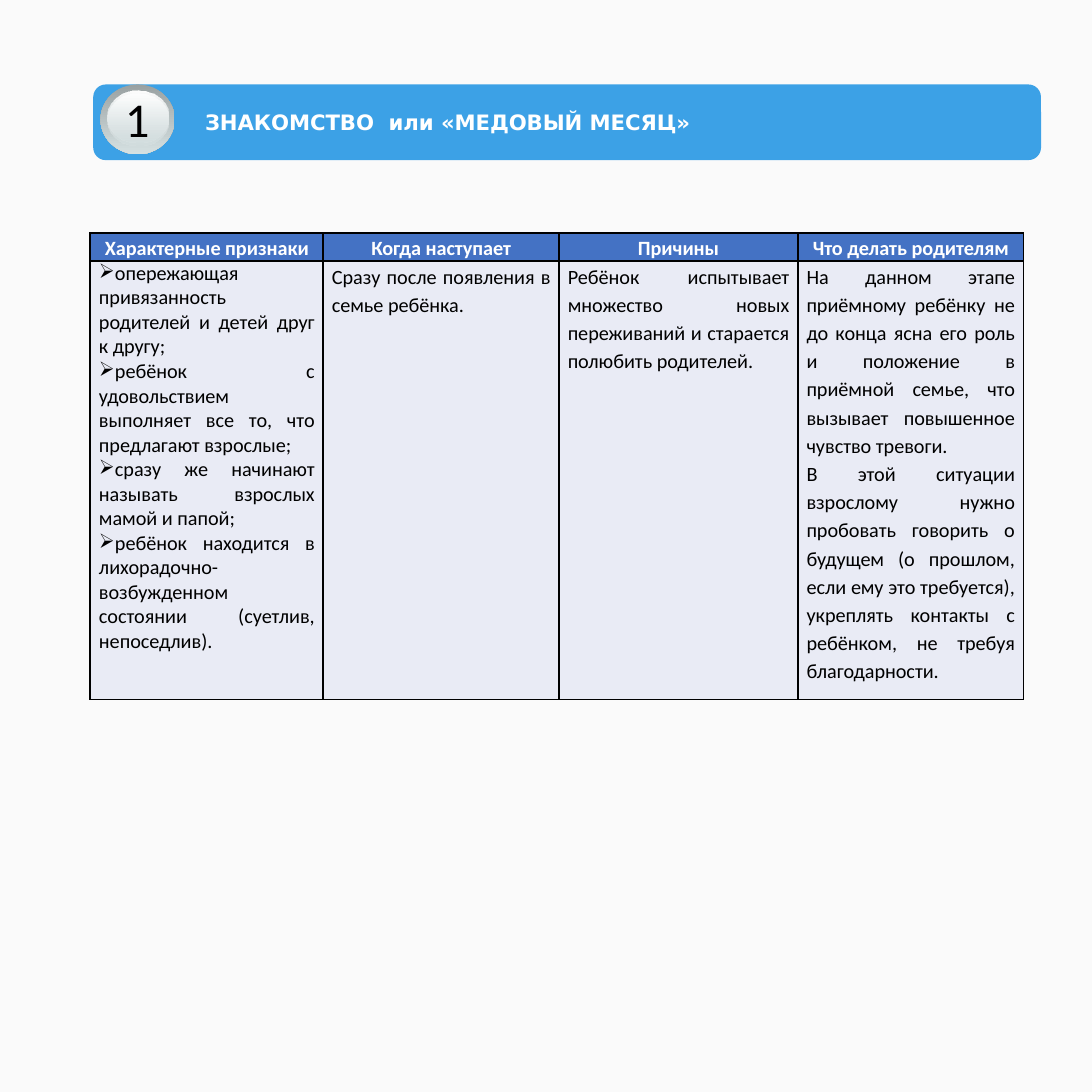
from lxml.etree import SubElement
from pptx import Presentation
from pptx.dml.color import RGBColor
from pptx.enum.shapes import MSO_SHAPE
from pptx.enum.text import MSO_ANCHOR, PP_ALIGN
from pptx.oxml.ns import qn
from pptx.util import Inches, Pt

PAPER = RGBColor(0xFA, 0xFA, 0xFA)
WHITE = RGBColor(0xFF, 0xFF, 0xFF)
BLACK = RGBColor(0x00, 0x00, 0x00)
BANNER = RGBColor(0x3C, 0xA1, 0xE6)
HEADER = RGBColor(0x44, 0x72, 0xC4)
BODY = RGBColor(0xE9, 0xEB, 0xF5)
STEEL = RGBColor(0x99, 0xA1, 0xA2)
SILVER = RGBColor(0xD6, 0xE1, 0xE2)

GRID = 75  # columns and rows across the square slide

TITLE = {"name": "DejaVu Sans", "size": Pt(10.5), "bold": True}
NUMBER = {"name": "Calibri", "size": Pt(24), "bold": False}
HEADER_TEXT = {"name": "Calibri", "size": Pt(10), "bold": True}
BODY_TEXT = {"name": "Calibri", "size": Pt(10), "bold": False}

STAGE = [
    ("Характерные признаки", 16, "➢", [
        "опережающая привязанность родителей и детей друг к другу;",
        "ребёнок с удовольствием выполняет все то, что предлагают взрослые;",
        "сразу же начинают называть взрослых мамой и папой;",
        "ребёнок находится в лихорадочно-возбужденном состоянии (суетлив, непоседлив).",
    ]),
    ("Когда наступает", 16.2, None, ["Сразу после появления в семье ребёнка."]),
    ("Причины", 16.4, None, [
        "Ребёнок испытывает множество новых переживаний и старается полюбить родителей.",
    ]),
    ("Что делать родителям", 15.5, None, [
        "На данном этапе приёмному ребёнку не до конца ясна его роль и положение "
        "в приёмной семье, что вызывает повышенное чувство тревоги.",
        "В этой ситуации взрослому нужно пробовать говорить о будущем (о прошлом, "
        "если ему это требуется), укреплять контакты с ребёнком, не требуя благодарности.",
    ]),
]


def assign(target, values):
    for name, value in values.items():
        setattr(target, name, value)


class StageSlide:
    def __init__(self, deck):
        self.unit = deck.slide_width / GRID
        self.page = deck.slides.add_slide(deck.slide_layouts[6])
        self.page.background.fill.solid()
        self.page.background.fill.fore_color.rgb = PAPER

    def span(self, *cells):
        return [round(cell * self.unit) for cell in cells]

    def shape(self, kind, place):
        shape = self.page.shapes.add_shape(kind, *self.span(*place))
        shape.shadow.inherit = False
        shape.line.fill.background()
        return shape

    def banner(self, place):
        shape = self.shape(MSO_SHAPE.ROUNDED_RECTANGLE, place)
        shape.fill.solid()
        shape.fill.fore_color.rgb = BANNER

    def disc(self, place, top, bottom, opacity=100):
        """Ellipse shaded downwards; opacity applies to the bottom colour."""
        shape = self.shape(MSO_SHAPE.OVAL, place)
        shape.fill.gradient()
        shape.fill.gradient_angle = 270
        for stop, color in zip(shape.fill.gradient_stops, (top, bottom)):
            stop.color.rgb = color
        if opacity < 100:
            last_color = shape.element.spPr.xpath(".//a:gs[2]/a:srgbClr")[0]
            SubElement(last_color, qn("a:alpha"), val=str(opacity * 1000))

    def add_text(self, para, text, style, color):
        run = para.add_run()
        run.text = text
        assign(run.font, style)
        run.font.color.rgb = color

    def label(self, place, text, style, color, wrap=True):
        box = self.page.shapes.add_textbox(*self.span(*place))
        box.text_frame.word_wrap = wrap
        self.add_text(box.text_frame.paragraphs[0], text, style, color)

    def cell(self, cell, texts, style, color, fill, align, bullet=None):
        side = Inches(0.06)
        assign(cell, {"margin_left": side, "margin_right": side, "margin_top": 0,
                      "margin_bottom": 0, "vertical_anchor": MSO_ANCHOR.TOP})
        properties = cell._tc.get_or_add_tcPr()
        for edge in "LRTB":
            line = SubElement(properties, qn(f"a:ln{edge}"), w=str(Pt(1)))
            paint = SubElement(line, qn("a:solidFill"))
            SubElement(paint, qn("a:srgbClr"), val=str(BLACK))
        cell.fill.solid()
        cell.fill.fore_color.rgb = fill
        frame = cell.text_frame
        for index, text in enumerate(texts):
            para = frame.add_paragraph() if index else frame.paragraphs[0]
            para.alignment = align
            if bullet:
                settings = para._p.get_or_add_pPr()
                settings.set("marL", "0")
                settings.set("indent", "0")
                SubElement(settings, qn("a:buChar"), char=bullet)
            else:
                para.line_spacing = 1.15
            self.add_text(para, text, style, color)

    def table(self, left, top, heights, columns):
        total = sum(column[1] for column in columns)
        frame = self.page.shapes.add_table(
            len(heights), len(columns), *self.span(left, top, total, sum(heights)))
        table = frame.table
        assign(table, {"first_row": False, "horz_banding": False})
        for row, height in zip(table.rows, self.span(*heights)):
            row.height = height
        for index, (heading, width, bullet, texts) in enumerate(columns):
            table.columns[index].width = self.span(width)[0]
            self.cell(table.cell(0, index), [heading], HEADER_TEXT, WHITE, HEADER,
                      PP_ALIGN.CENTER)
            self.cell(table.cell(1, index), texts, BODY_TEXT, BLACK, BODY,
                      PP_ALIGN.JUSTIFY, bullet)


def main():
    deck = Presentation()
    deck.slide_width = deck.slide_height = Inches(7.5)
    slide = StageSlide(deck)
    slide.table(6.2, 16, (1.4, 30.1), STAGE)
    slide.banner((6.4, 5.8, 65.1, 5.2))
    slide.disc((6.9, 5.8, 5.1, 4.8), STEEL, SILVER)
    slide.disc((7.4, 6.4, 4.2, 3.6), WHITE, SILVER, opacity=38)
    slide.label((13.1, 7, 50.2, 2.8), "ЗНАКОМСТВО  или «МЕДОВЫЙ МЕСЯЦ»", TITLE, WHITE)
    slide.disc((7.4, 6.2, 4.2, 3.6), WHITE, SILVER, opacity=38)
    slide.label((7.6, 5.6, 3.7, 5), "1", NUMBER, BLACK, wrap=False)
    deck.save("out.pptx")


if __name__ == "__main__":
    main()
